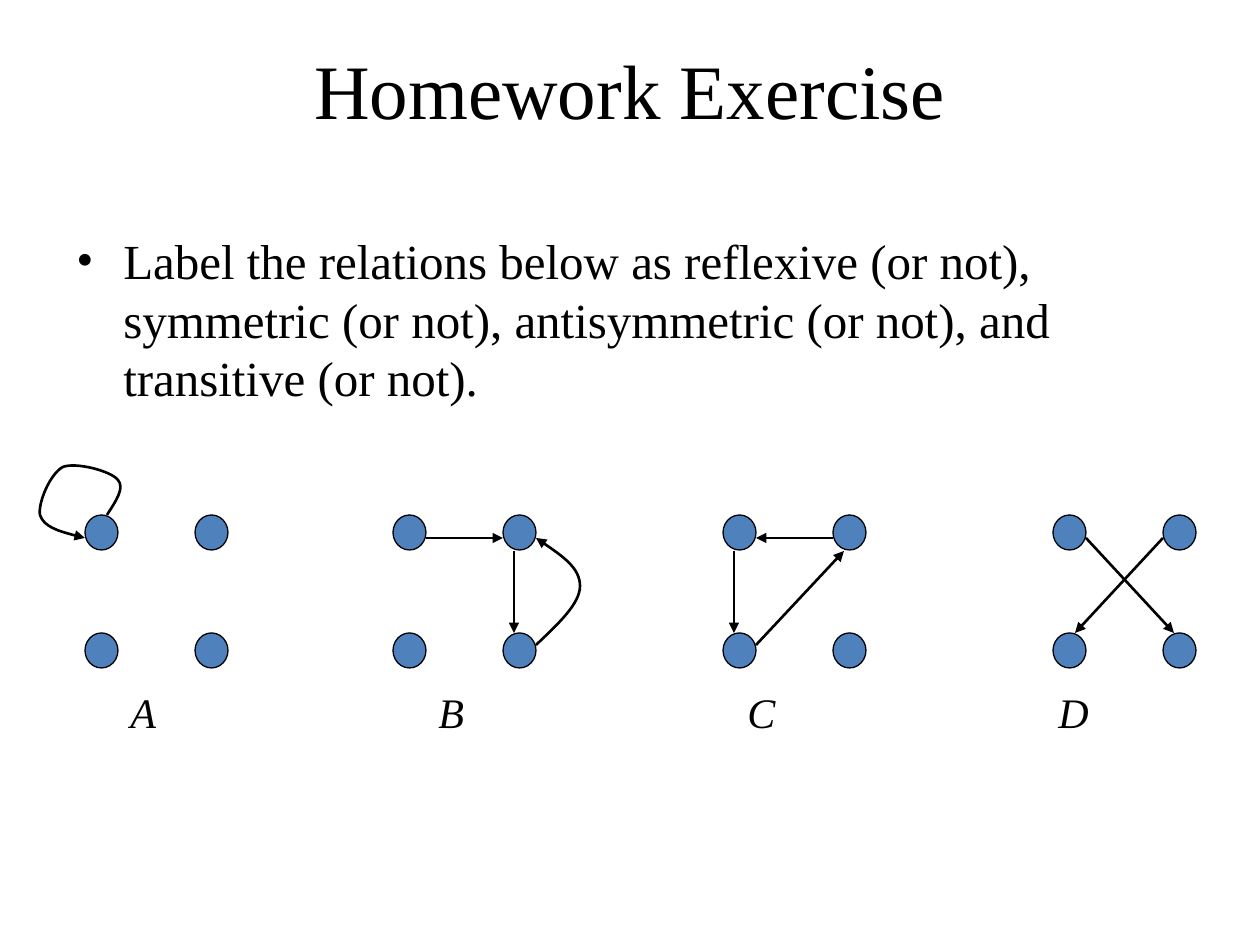
from lxml import etree
from pptx import Presentation
from pptx import util as u
from pptx.dml.color import RGBColor
from pptx.enum import shapes, text
from pptx.oxml.ns import qn

EMU_PER_PX = 914400 / 126
COLORS = {"ink": "000000", "node": "4F81BD"}
FONT = "Times New Roman"


def px(n):
    return u.Emu(round(n * EMU_PER_PX))


def rgb(name):
    return RGBColor.from_string(COLORS[name])


class Board:
    """Holds the style and the current slide."""

    def __init__(self, slide):
        self.shapes = slide.shapes

    def text(self, x, y, w, h, content, size, align=text.PP_ALIGN.LEFT,
             anchor=text.MSO_ANCHOR.TOP, italic=False):
        tf = self.shapes.add_textbox(px(x), px(y), px(w), px(h)).text_frame
        tf.word_wrap = True
        tf.vertical_anchor = anchor
        p = tf.paragraphs[0]
        p.alignment = align
        r = p.add_run()
        r.text = content
        r.font.name, r.font.size, r.font.italic = FONT, u.Pt(size), italic
        r.font.color.rgb = rgb("ink")
        return p

    def bullet(self, p, indent):
        pPr = p._p.get_or_add_pPr()
        pPr.set("marL", str(px(indent)))
        pPr.set("indent", str(-px(indent)))
        etree.SubElement(pPr, qn("a:buFont")).set("typeface", FONT)
        etree.SubElement(pPr, qn("a:buChar")).set("char", "•")

    def tabs(self, p, stops):
        tab_list = etree.SubElement(p._p.get_or_add_pPr(), qn("a:tabLst"))
        for stop in stops:
            tab = etree.SubElement(tab_list, qn("a:tab"))
            tab.set("pos", str(px(stop)))
            tab.set("algn", "l")

    def node(self, x, y, w, h):
        s = self.shapes.add_shape(shapes.MSO_SHAPE.OVAL, px(x), px(y), px(w), px(h))
        s.shadow.inherit = False
        s.fill.solid()
        s.fill.fore_color.rgb = rgb("node")
        s.line.color.rgb = rgb("ink")
        s.line.width = u.Pt(0.75)

    def arrowhead(self, s):
        s.line.color.rgb = rgb("ink")
        s.line.width = u.Pt(1.5)
        tail = etree.SubElement(s.line._get_or_add_ln(), qn("a:tailEnd"))
        tail.set("type", "triangle")

    def arrow(self, x1, y1, x2, y2):
        s = self.shapes.add_connector(shapes.MSO_CONNECTOR.STRAIGHT,
                                      px(x1), px(y1), px(x2), px(y2))
        self.arrowhead(s)
        etree.SubElement(s._element.spPr, qn("a:effectLst"))

    def curve(self, points):
        """Bezier arrow: a start, then three points for each segment."""
        fb = self.shapes.build_freeform(*points[0], scale=EMU_PER_PX)
        fb.add_line_segments(points[1:], close=False)
        s = fb.convert_to_shape()
        s.shadow.inherit = False
        s.fill.background()
        self.arrowhead(s)
        # Join each three straight steps into one cubic segment
        steps = list(s._element.iter(qn("a:lnTo")))
        outline = steps[0].getparent()
        for i in range(0, len(steps), 3):
            cubic = etree.SubElement(outline, qn("a:cubicBezTo"))
            for step in steps[i:i + 3]:
                cubic.append(step[0])
                outline.remove(step)


# Node grid of each relation
NODE_W, NODE_H = 33, 35
COLUMN_GAP, ROWS = 110, (515, 633)

# Arrows and curves, with x counted from the left of the relation
RELATIONS = {
    "A": {"x": 85, "curves": [[
        (22, 515), (31, 501), (40, 488), (33, 480),
        (26, 471), (-9, 462), (-22, 467),
        (-35, 474), (-47, 503), (-45, 515),
        (-41, 527), (-21, 533), (0, 538)]]},
    "B": {"x": 393,
          "arrows": [(33, 538, 110, 538), (121, 551, 121, 633)],
          "curves": [[
              (143, 645), (165, 624), (187, 604), (187, 586),
              (187, 568), (165, 553), (143, 538)]]},
    "C": {"x": 723,
          "arrows": [(110, 538, 33, 538), (11, 551, 11, 633),
                     (33, 645, 121, 551)]},
    "D": {"x": 1053,
          "arrows": [(33, 538, 121, 633), (110, 538, 22, 633)]},
}


def main():
    prs = Presentation()
    prs.slide_width, prs.slide_height = px(1260), px(945)
    board = Board(prs.slides.add_slide(prs.slide_layouts[6]))

    # Title and task
    board.text(63, 23, 1134, 132, "Homework Exercise", 44,
               text.PP_ALIGN.CENTER, text.MSO_ANCHOR.MIDDLE)
    task = board.text(
        64, 224, 1149, 242,
        "Label the relations below as reflexive (or not), symmetric (or not), "
        "antisymmetric (or not), and transitive (or not).", 28)
    task.space_before = u.Pt(5.6)
    board.bullet(task, 47)

    # Relations
    for relation in RELATIONS.values():
        left = relation["x"]
        for y in ROWS:
            for column in range(2):
                board.node(left + column * COLUMN_GAP, y, NODE_W, NODE_H)
        for x1, y1, x2, y2 in relation.get("arrows", []):
            board.arrow(left + x1, y1, left + x2, y2)
        for points in relation.get("curves", []):
            board.curve([(left + x, y) for x, y in points])

    # Relation names, in a box with room to spare after the last tab
    names = board.text(118, 680, 1040, 63, "\t".join(RELATIONS), 24, italic=True)
    board.tabs(names, (308, 617, 928))

    prs.save("out.pptx")


if __name__ == "__main__":
    main()
